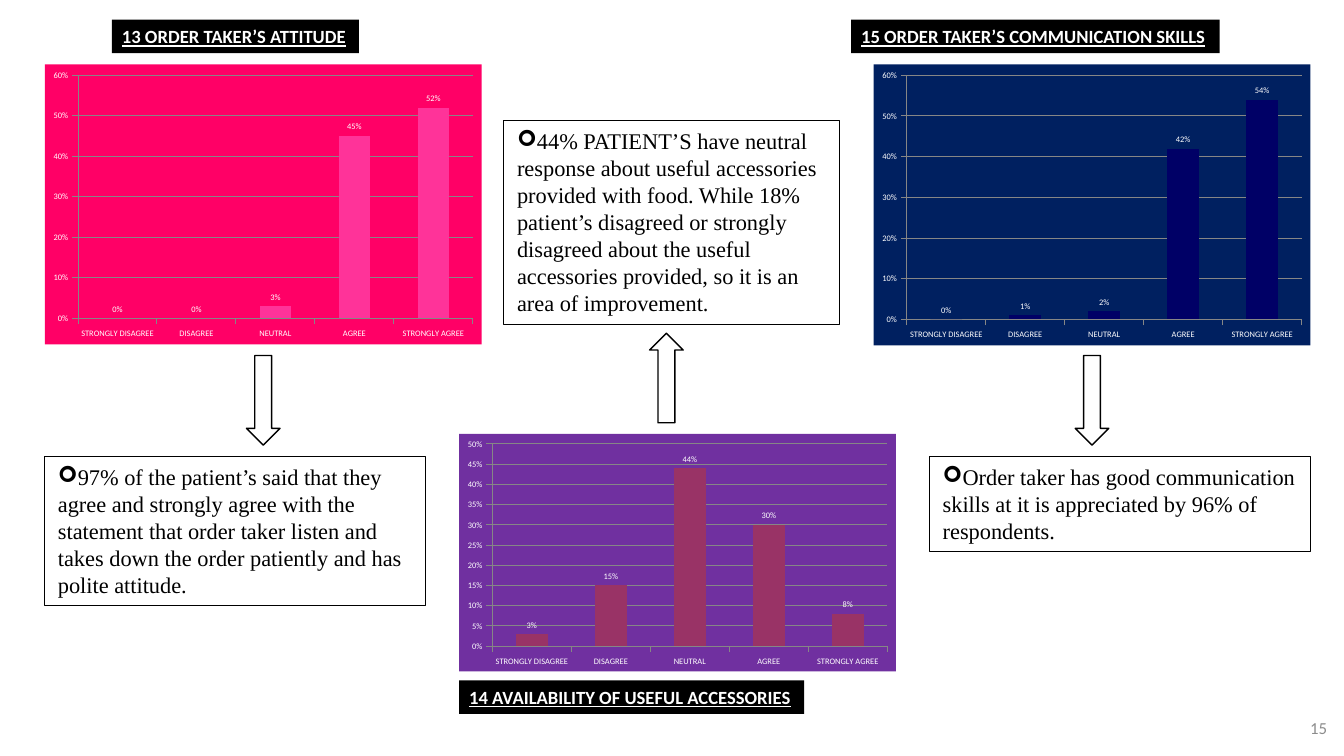
from dataclasses import dataclass

from lxml.etree import SubElement
from pptx import Presentation
from pptx.chart.data import CategoryChartData
from pptx.dml.color import RGBColor
from pptx.enum.chart import XL_CHART_TYPE, XL_LABEL_POSITION, XL_TICK_MARK
from pptx.enum.shapes import MSO_SHAPE
from pptx.enum.text import MSO_ANCHOR, PP_ALIGN
from pptx.oxml.ns import qn
from pptx.util import Inches, Pt

SLIDE_WIDTH, SLIDE_HEIGHT = Inches(13.333), Inches(7.5)
MODULE = SLIDE_WIDTH / 120  # square grid: 120 columns by 67.5 rows
ANSWERS = ("STRONGLY DISAGREE", "DISAGREE", "NEUTRAL", "AGREE", "STRONGLY AGREE")


@dataclass(frozen=True)
class Theme:
    sans: str = "Calibri"
    serif: str = "Times New Roman"
    black: str = "000000"
    white: str = "FFFFFF"
    number_gray: str = "8C8C8C"
    grid_gray: str = "868686"
    chart_size: float = 6
    title_size: float = 13.3
    body_size: float = 16
    number_size: float = 12
    arrow_line: float = 1
    box_line: float = 0.75


THEME = Theme()


@dataclass(frozen=True)
class Area:
    """Place on the grid, in columns and rows."""
    column: float
    row: float
    columns: float
    rows: float

    def lengths(self) -> tuple:
        cells = (self.column, self.row, self.columns, self.rows)
        return tuple(round(cell * MODULE) for cell in cells)


@dataclass(frozen=True)
class Survey:
    area: Area
    shares: tuple
    top: float
    step: float
    background: str
    bars: str


@dataclass(frozen=True)
class Label:
    area: Area
    text: str


@dataclass(frozen=True)
class Arrow:
    column: float
    row: float
    rotation: float = 0


SURVEYS = (
    Survey(Area(4, 5.75, 39, 25), (0, 0, 0.03, 0.45, 0.52), 0.6, 0.1, "FF0066", "FF3399"),
    Survey(Area(41, 38.75, 39, 21.2), (0.03, 0.15, 0.44, 0.3, 0.08), 0.5, 0.05, "7030A0", "993366"),
    Survey(Area(78, 5.75, 39, 25.1), (0, 0.01, 0.02, 0.42, 0.54), 0.6, 0.1, "002060", "000066"),
)
ARROWS = (Arrow(22, 31.75), Arrow(96, 31.75), Arrow(58, 29.75, 180))
TITLES = (
    Label(Area(10, 1.75, 22.05, 3), "13 ORDER TAKER’S ATTITUDE"),
    Label(Area(41, 60.75, 30.8, 3), "14 AVAILABILITY OF USEFUL ACCESSORIES"),
    Label(Area(76, 1.75, 32.9, 3), "15 ORDER TAKER’S COMMUNICATION SKILLS"),
)
FINDINGS = (
    Label(Area(4, 40.75, 34, 13.3),
          "97% of the patient’s said that they agree and strongly agree with the statement "
          "that order taker listen and takes down the order patiently and has polite attitude."),
    Label(Area(83, 40.75, 34, 8.5),
          "Order taker has good communication skills at it is appreciated by 96% of respondents."),
    Label(Area(45, 10.75, 30, 18.2),
          "44% PATIENT’S have neutral response about useful accessories provided with food. "
          "While 18% patient’s disagreed or strongly disagreed about the useful accessories "
          "provided, so it is an area of improvement."),
)


def set_font(font, name: str, size: float, color: str) -> None:
    font.name, font.size = name, Pt(size)
    font.color.rgb = RGBColor.from_string(color)


def paint(target, color: str) -> None:
    target.fill.solid()
    target.fill.fore_color.rgb = RGBColor.from_string(color)


def fill_chart_space(chart, color: str) -> None:
    """Fill the chart's background and remove its border."""
    properties = chart.element.makeelement(qn("c:spPr"))
    solid = SubElement(properties, qn("a:solidFill"))
    SubElement(solid, qn("a:srgbClr"), val=color)
    SubElement(SubElement(properties, qn("a:ln")), qn("a:noFill"))
    chart.element.find(qn("c:chart")).addnext(properties)


def add_survey(page, survey: Survey) -> None:
    data = CategoryChartData(number_format="0%")
    data.categories = ANSWERS
    data.add_series("Series 1", survey.shares)
    frame = page.shapes.add_chart(XL_CHART_TYPE.COLUMN_CLUSTERED, *survey.area.lengths(), data)
    chart = frame.chart
    chart.has_legend = chart.has_title = False
    set_font(chart.font, THEME.sans, THEME.chart_size, THEME.white)
    fill_chart_space(chart, survey.background)

    values = chart.value_axis
    values.minimum_scale, values.maximum_scale = 0, survey.top
    values.major_unit = survey.step
    values.tick_labels.number_format = "0%"
    values.tick_labels.number_format_is_linked = False
    values.has_major_gridlines = True
    for axis in (chart.category_axis, values):
        axis.major_tick_mark = XL_TICK_MARK.OUTSIDE
        set_font(axis.tick_labels.font, THEME.sans, THEME.chart_size, THEME.white)
    for line in (chart.category_axis.format.line, values.format.line,
                 values.major_gridlines.format.line):
        line.color.rgb = RGBColor.from_string(THEME.grid_gray)
        line.width = Pt(0.75)

    plot = chart.plots[0]
    plot.gap_width, plot.vary_by_categories = 150, False
    paint(plot.series[0].format, survey.bars)
    plot.has_data_labels = True
    labels = plot.data_labels
    labels.show_value = True
    labels.number_format, labels.number_format_is_linked = "0%", False
    labels.position = XL_LABEL_POSITION.OUTSIDE_END
    set_font(labels.font, THEME.sans, THEME.chart_size, THEME.white)


def add_block(page, kind: MSO_SHAPE, area: Area, fill: str, line_width: float = 0):
    block = page.shapes.add_shape(kind, *area.lengths())
    block.shadow.inherit = False
    paint(block, fill)
    if line_width:
        block.line.color.rgb = RGBColor.from_string(THEME.black)
        block.line.width = Pt(line_width)
    else:
        block.line.fill.background()
    return block


def add_arrow(page, arrow: Arrow) -> None:
    area = Area(arrow.column, arrow.row, 3, 8)
    block = add_block(page, MSO_SHAPE.DOWN_ARROW, area, THEME.white, THEME.arrow_line)
    block.rotation = arrow.rotation


def write(box, text: str, name: str, size: float, color: str, align=PP_ALIGN.LEFT):
    para = box.text_frame.paragraphs[0]
    para.text, para.alignment = text, align
    span = para.runs[0]
    set_font(span.font, name, size, color)
    return span


def add_title(page, label: Label) -> None:
    box = add_block(page, MSO_SHAPE.RECTANGLE, label.area, THEME.black)
    box.text_frame.word_wrap = False
    span = write(box, label.text, THEME.sans, THEME.title_size, THEME.white)
    span.font.bold = span.font.underline = True


def add_finding(page, label: Label) -> None:
    box = add_block(page, MSO_SHAPE.RECTANGLE, label.area, THEME.white, THEME.box_line)
    frame = box.text_frame
    frame.word_wrap, frame.vertical_anchor = True, MSO_ANCHOR.TOP
    frame.margin_left = frame.margin_right = Inches(0.13)
    frame.margin_top = frame.margin_bottom = Inches(0.07)
    span = write(box, label.text, THEME.serif, THEME.body_size, THEME.black)
    span.font.bold = False
    properties = frame.paragraphs[0]._p.get_or_add_pPr()
    SubElement(properties, qn("a:buFont"), typeface="Wingdings")
    SubElement(properties, qn("a:buChar"), char="➢")


def add_page_number(page) -> None:
    box = page.shapes.add_textbox(*Area(111.3, 62.4, 7.2, 5.1).lengths())
    frame = box.text_frame
    frame.word_wrap, frame.vertical_anchor = True, MSO_ANCHOR.MIDDLE
    frame.margin_left = frame.margin_right = frame.margin_top = frame.margin_bottom = 0
    write(box, "15", THEME.sans, THEME.number_size, THEME.number_gray, PP_ALIGN.RIGHT)


def main() -> None:
    deck = Presentation()
    deck.slide_width, deck.slide_height = SLIDE_WIDTH, SLIDE_HEIGHT
    page = deck.slides.add_slide(deck.slide_layouts[6])
    add_page_number(page)
    for draw, items in ((add_survey, SURVEYS), (add_arrow, ARROWS),
                        (add_title, TITLES), (add_finding, FINDINGS)):
        for item in items:
            draw(page, item)
    deck.save("out.pptx")


if __name__ == "__main__":
    main()
